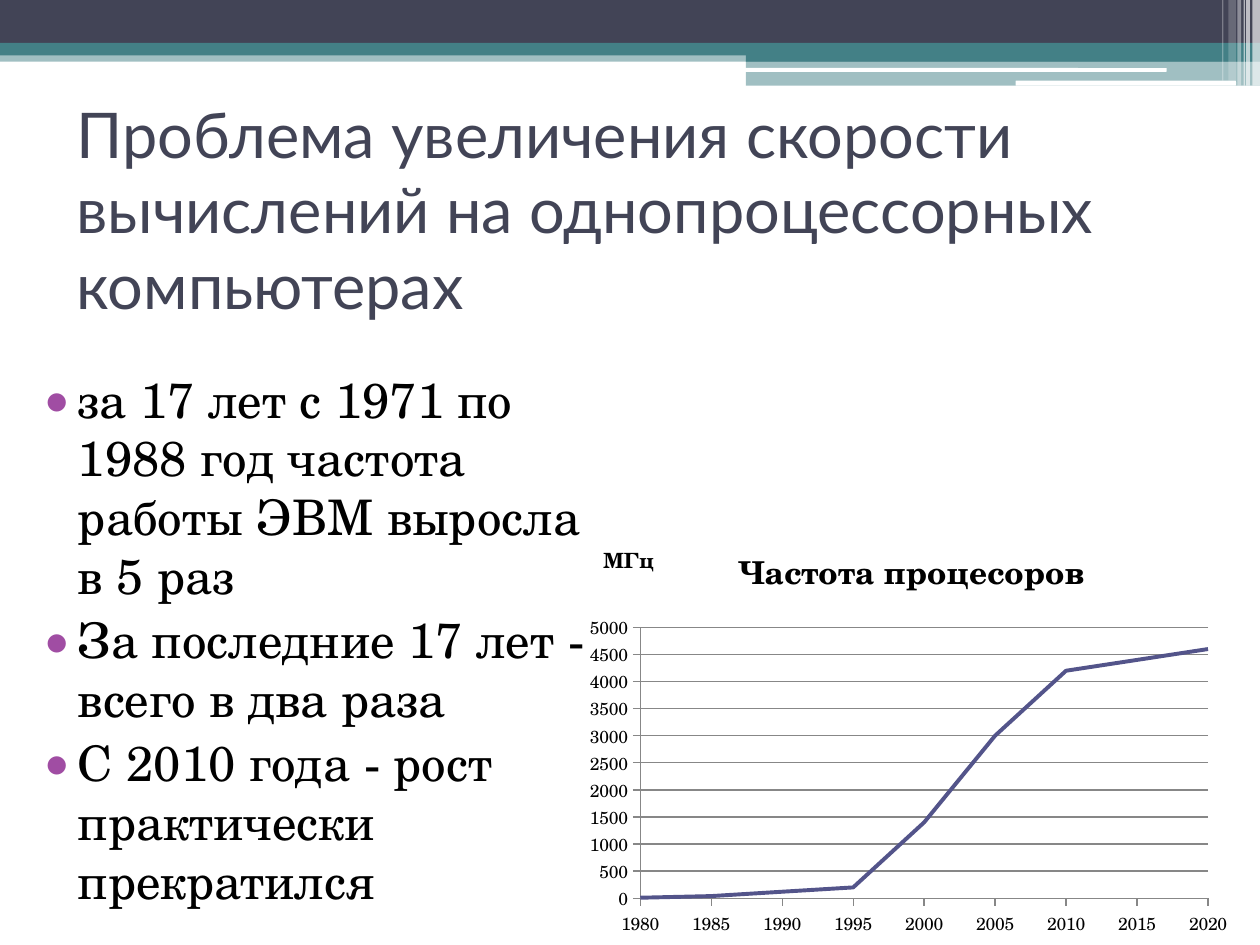
import enum

import pptx
import pptx.chart.data
import pptx.dml.color
import pptx.enum.chart
import pptx.enum.shapes
import pptx.enum.text
import pptx.oxml
import pptx.oxml.ns
import pptx.util
from pptx.util import Inches


class Theme(enum.Enum):
    DARK = "424456"
    TEAL = "438086"
    WHITE = "FFFFFF"
    BLACK = "000000"
    BULLET = "A04DA3"
    CURVE = "53548A"
    GRID = "878787"
    HEADING_FONT = "Lato"
    BODY_FONT = "TeX Gyre Schola"
    TITLE_SIZE = 36
    BODY_SIZE = 28
    CHART_TITLE_SIZE = 18
    UNIT_SIZE = 12
    AXIS_SIZE = 10


def style_font(font, face, size, color, bold=False):
    font.name = face.value
    font.size = pptx.util.Pt(size.value)
    font.color.rgb = pptx.dml.color.RGBColor.from_string(color.value)
    font.bold = bold


def place_chart_part(part, position):
    """Give a chart title or plot area a fixed place, in fractions of the chart."""
    for old in part.findall(pptx.oxml.ns.qn("c:layout")):
        part.remove(old)
    target = '<c:layoutTarget val="inner"/>' if "w" in position else ""
    modes = "".join(f'<c:{key}Mode val="edge"/>' for key in ("x", "y"))
    values = "".join(f'<c:{key} val="{value}"/>' for key, value in position.items())
    layout = pptx.oxml.parse_xml(
        f'<c:layout {pptx.oxml.ns.nsdecls("c")}><c:manualLayout>'
        f"{target}{modes}{values}</c:manualLayout></c:layout>")
    text = part.find(pptx.oxml.ns.qn("c:tx"))
    part.insert(0 if text is None else 1, layout)


deck = pptx.Presentation()
deck.slide_width, deck.slide_height = Inches(10), Inches(7.5)
slide = deck.slides.add_slide(deck.slide_layouts[6])
shapes = slide.shapes

# Header bands: left, top, width, height, color, opacity in percent, rounded
bands = [
    (0, 0.4, 10, 0.09, Theme.TEAL, 50, False),
    (0, 0, 10, 0.34, Theme.DARK, 100, False),
    (0, 0.34, 10, 0.1, Theme.TEAL, 100, False),
    (5.92, 0.39, 4.08, 0.1, Theme.TEAL, 100, False),
    (5.92, 0.48, 4.08, 0.2, Theme.TEAL, 50, False),
    (5.91, 0.54, 3.35, 0.03, Theme.WHITE, 100, True),
    (8.06, 0.64, 1.75, 0.04, Theme.WHITE, 100, True),
]
stripes = [(9.94, 0.06, 0.68, 65), (9.89, 0.03, 0.68, 65), (9.87, 0.01, 0.68, 60),
           (9.82, 0.03, 0.68, 40), (9.75, 0.06, 0.64, 20), (9.7, 0.01, 0.64, 30)]
bands += [(left, 0, width, height, Theme.WHITE, opacity, False)
          for left, width, height, opacity in stripes]
presets = pptx.enum.shapes.MSO_SHAPE
for left, top, width, height, color, opacity, rounded in bands:
    preset = presets.ROUNDED_RECTANGLE if rounded else presets.RECTANGLE
    band = shapes.add_shape(preset, Inches(left), Inches(top), Inches(width), Inches(height))
    band.shadow.inherit = False
    band.line.fill.background()
    band.fill.solid()
    band.fill.fore_color.rgb = pptx.dml.color.RGBColor.from_string(color.value)
    if opacity < 100:
        fill_color = band.fill._xPr.find(".//" + pptx.oxml.ns.qn("a:srgbClr"))
        fill_color.append(pptx.oxml.parse_xml(
            f'<a:alpha {pptx.oxml.ns.nsdecls("a")} val="{opacity * 1000}"/>'))

# Title
title_box = shapes.add_textbox(Inches(0.51), Inches(1.07), Inches(9), Inches(1.17))
title_box.text_frame.word_wrap = True
title_box.text_frame.vertical_anchor = pptx.enum.text.MSO_ANCHOR.MIDDLE
span = title_box.text_frame.paragraphs[0].add_run()
span.text = "Проблема увеличения скорости вычислений на однопроцессорных компьютерах"
style_font(span.font, Theme.HEADING_FONT, Theme.TITLE_SIZE, Theme.DARK)

# Bulleted list
points = [
    "за 17 лет с 1971 по 1988 год частота работы ЭВМ выросла в 5 раз",
    "За последние 17 лет - всего в два раза",
    "С 2010 года - рост практически прекратился",
]
list_box = shapes.add_textbox(Inches(0.12), Inches(2.88), Inches(4.81), Inches(4.31))
frame = list_box.text_frame
frame.word_wrap = True
for index, point in enumerate(points):
    para = frame.add_paragraph() if index else frame.paragraphs[0]
    para.space_before = pptx.util.Pt(3)
    properties = para._p.get_or_add_pPr()
    properties.set("marL", str(Inches(0.4)))
    properties.set("indent", str(Inches(-0.28)))
    namespace = pptx.oxml.ns.nsdecls("a")
    for markup in (
        f'<a:buClr {namespace}><a:srgbClr val="{Theme.BULLET.value}"/></a:buClr>',
        f'<a:buFont {namespace} typeface="{Theme.HEADING_FONT.value}"/>',
        f'<a:buChar {namespace} char="•"/>',
    ):
        properties.append(pptx.oxml.parse_xml(markup))
    span = para.add_run()
    span.text = point
    style_font(span.font, Theme.BODY_FONT, Theme.BODY_SIZE, Theme.BLACK)

# Processor frequency chart
frequencies = [10, 40, 120, 200, 1400, 3000, 4200, 4400, 4600]
chart_data = pptx.chart.data.XyChartData()
series_data = chart_data.add_series("Частота процесоров")
for year, frequency in zip(range(1980, 2021, 5), frequencies):
    series_data.add_data_point(year, frequency)
chart = shapes.add_chart(
    pptx.enum.chart.XL_CHART_TYPE.XY_SCATTER_LINES_NO_MARKERS,
    Inches(4.61), Inches(4.14), Inches(5.24), Inches(3.36), chart_data).chart
style_font(chart.font, Theme.BODY_FONT, Theme.AXIS_SIZE, Theme.BLACK)
chart.has_legend = False
chart.plots[0].vary_by_categories = False

span = chart.chart_title.text_frame.paragraphs[0].add_run()
span.text = "Частота процесоров"
style_font(span.font, Theme.BODY_FONT, Theme.CHART_TITLE_SIZE, Theme.BLACK, bold=True)
place_chart_part(chart.chart_title._element, {"x": 0.23, "y": 0.04})
plot_area = chart._chartSpace.find(".//" + pptx.oxml.ns.qn("c:plotArea"))
place_chart_part(plot_area, {"x": 0.09, "y": 0.25, "w": 0.86, "h": 0.64})

grid_color = pptx.dml.color.RGBColor.from_string(Theme.GRID.value)
year_axis, frequency_axis = chart.category_axis, chart.value_axis
for axis, low, high, step in ((year_axis, 1980, 2020, 5), (frequency_axis, 0, 5000, 500)):
    axis.minimum_scale, axis.maximum_scale, axis.major_unit = low, high, step
    axis.major_tick_mark = pptx.enum.chart.XL_TICK_MARK.OUTSIDE
    axis.minor_tick_mark = pptx.enum.chart.XL_TICK_MARK.NONE
    axis.tick_labels.number_format = "General"
    axis.tick_labels.number_format_is_linked = False
    axis.format.line.color.rgb = grid_color
year_axis.has_major_gridlines = False
frequency_axis.has_major_gridlines = True
frequency_axis.major_gridlines.format.line.color.rgb = grid_color

curve = chart.plots[0].series[0]
curve.smooth = False
curve.format.line.width = pptx.util.Pt(2.25)
curve.format.line.color.rgb = pptx.dml.color.RGBColor.from_string(Theme.CURVE.value)

# Unit label above the frequency axis
unit_box = shapes.add_textbox(Inches(4.69), Inches(4.3), Inches(0.71), Inches(0.3))
unit_box.text_frame.word_wrap = True
span = unit_box.text_frame.paragraphs[0].add_run()
span.text = "МГц"
style_font(span.font, Theme.BODY_FONT, Theme.UNIT_SIZE, Theme.BLACK, bold=True)

deck.save("out.pptx")
